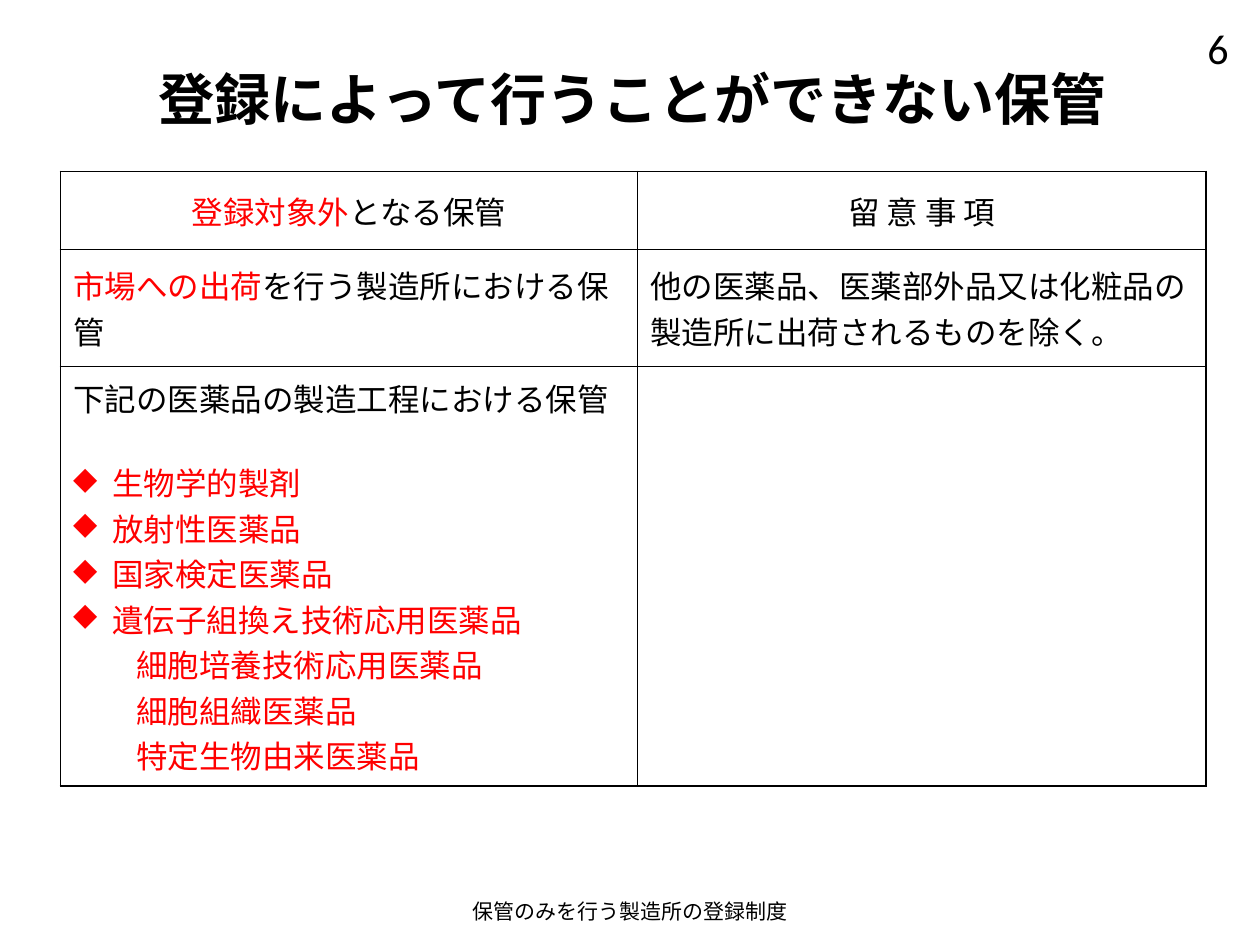
from dataclasses import dataclass

from lxml import etree
from pptx import Presentation
from pptx.dml.color import RGBColor
from pptx.enum import text
from pptx.oxml import ns
from pptx.util import Inches, Pt


@dataclass(frozen=True)
class Theme:
    black: RGBColor = RGBColor(0, 0, 0)
    red: RGBColor = RGBColor(255, 0, 0)
    white: RGBColor = RGBColor(255, 255, 255)
    latin: str = "Calibri"
    japanese: str = "Noto Sans CJK JP"
    title_size: int = 32
    number_size: int = 24
    body_size: int = 18
    footer_size: int = 12
    border: int = 1


THEME = Theme()
LEFT, CENTER, RIGHT = (
    text.PP_ALIGN.LEFT, text.PP_ALIGN.CENTER, text.PP_ALIGN.RIGHT)
MIDDLE, TOP = text.MSO_ANCHOR.MIDDLE, text.MSO_ANCHOR.TOP


def add_run(paragraph, words, size, color=THEME.black, font=THEME.latin, bold=False):
    run = paragraph.add_run()
    run.text = words
    run.font.size = Pt(size)
    run.font.bold = bold
    run.font.color.rgb = color
    run.font.name = font
    # Japanese characters take the East Asian face
    latin = run.font._element.find(ns.qn("a:latin"))
    east_asian = etree.Element(ns.qn("a:ea"), typeface=THEME.japanese)
    latin.addnext(east_asian)


def add_label(slide, box, words, size, align, anchor=MIDDLE,
              font=THEME.japanese, bold=False):
    shape = slide.shapes.add_textbox(*map(Inches, box))
    frame = shape.text_frame
    frame.word_wrap = True
    frame.vertical_anchor = anchor
    paragraph = frame.paragraphs[0]
    paragraph.alignment = align
    add_run(paragraph, words, size, font=font, bold=bold)


def set_indent(paragraph, margin, hanging=0, bullet=None):
    properties = paragraph._p.get_or_add_pPr()
    properties.set("marL", str(Inches(margin)))
    properties.set("indent", str(-Inches(hanging)))
    if bullet:
        etree.SubElement(properties, ns.qn("a:buChar"), char=bullet)


def style_cell(cell):
    cell.fill.solid()
    cell.fill.fore_color.rgb = THEME.white
    cell.vertical_anchor = MIDDLE
    properties = cell._tc.get_or_add_tcPr()
    for position, side in enumerate(("lnL", "lnR", "lnT", "lnB")):
        line = etree.Element(ns.qn(f"a:{side}"), w=str(Pt(THEME.border)))
        fill = etree.SubElement(line, ns.qn("a:solidFill"))
        etree.SubElement(fill, ns.qn("a:srgbClr"), val=str(THEME.black))
        properties.insert(position, line)


def fill_cell(cell, runs, align=LEFT):
    paragraph = cell.text_frame.paragraphs[0]
    paragraph.alignment = align
    for words, color in runs:
        add_run(paragraph, words, THEME.body_size, color)


def add_product_list(cell, products, related_products):
    frame = cell.text_frame
    for position, product in enumerate(products):
        paragraph = frame.add_paragraph()
        set_indent(paragraph, 0.31, 0.31, "◆")
        if position == 0:
            paragraph.space_before = Pt(22)
        add_run(paragraph, product, THEME.body_size, THEME.red)
    for product in related_products:
        paragraph = frame.add_paragraph()
        set_indent(paragraph, 0.5)
        add_run(paragraph, product, THEME.body_size, THEME.red)


def add_storage_table(slide, box):
    column_widths, row_heights = (4.58, 4.51), (0.62, 0.93, 3.33)
    table = slide.shapes.add_table(
        len(row_heights), len(column_widths), *map(Inches, box)).table
    table.first_row = table.horz_banding = False
    for column, width in zip(table.columns, column_widths):
        column.width = Inches(width)
    for row, height in zip(table.rows, row_heights):
        row.height = Inches(height)
    for cell in table.iter_cells():
        style_cell(cell)

    # Header row
    black, red = THEME.black, THEME.red
    fill_cell(table.cell(0, 0), [("登録対象外", red), ("となる保管", black)], CENTER)
    fill_cell(table.cell(0, 1), [("留 意 事 項", black)], CENTER)

    # Shipment to market
    fill_cell(table.cell(1, 0),
              [("市場への出荷", red), ("を行う製造所における保管", black)])
    fill_cell(table.cell(1, 1),
              [("他の医薬品、医薬部外品又は化粧品の製造所に出荷されるものを除く。", black)])

    # Manufacturing processes
    process_cell = table.cell(2, 0)
    fill_cell(process_cell, [("下記の医薬品の製造工程における保管", black)])
    add_product_list(
        process_cell,
        ("生物学的製剤", "放射性医薬品", "国家検定医薬品", "遺伝子組換え技術応用医薬品"),
        ("細胞培養技術応用医薬品", "細胞組織医薬品", "特定生物由来医薬品"))


def main():
    presentation = Presentation()
    presentation.slide_width = Inches(10)
    presentation.slide_height = Inches(7.5)
    slide = presentation.slides.add_slide(presentation.slide_layouts[6])

    # Page number and title
    add_label(slide, (7.79, 0.13, 2.06, 0.4), "6", THEME.number_size, RIGHT,
              TOP, THEME.latin)
    add_label(slide, (0.34, 0.2, 9.37, 1.16), "登録によって行うことができない保管",
              THEME.title_size, CENTER, bold=True)

    # Storage that registration does not cover
    add_storage_table(slide, (0.48, 1.36, 9.09, 4.88))

    # Footer
    add_label(slide, (3.31, 7.03, 3.38, 0.4), "保管のみを行う製造所の登録制度",
              THEME.footer_size, CENTER)

    presentation.save("out.pptx")


if __name__ == "__main__":
    main()
